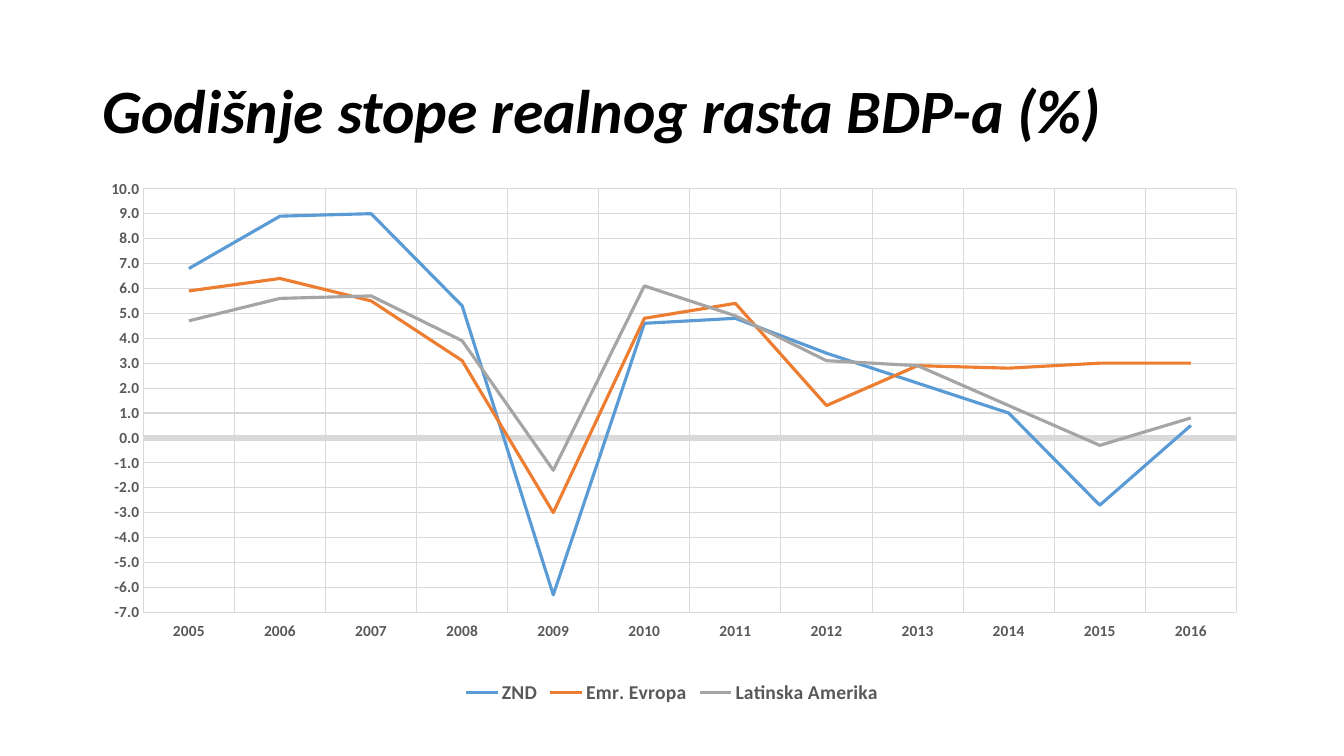
from lxml import etree
from pptx import Presentation
from pptx.chart.data import CategoryChartData
from pptx.dml.color import RGBColor
from pptx.enum.chart import XL_CHART_TYPE, XL_LEGEND_POSITION, XL_TICK_LABEL_POSITION, XL_TICK_MARK
from pptx.enum.text import MSO_ANCHOR
from pptx.oxml.ns import qn
from pptx.util import Pt

FONT = "Calibri"
COLORS = {
    "title": "000000",
    "label": "595959",
    "grid": "D9D9D9",
    "ZND": "5B9BD5",
    "Emr. Evropa": "ED7D31",
    "Latinska Amerika": "A5A5A5",
}
YEARS = [str(year) for year in range(2005, 2017)]
GROWTH = {
    "ZND": (6.8, 8.9, 9, 5.3, -6.3, 4.6, 4.8, 3.4, 2.2, 1, -2.7, 0.5),
    "Emr. Evropa": (5.9, 6.4, 5.5, 3.1, -3, 4.8, 5.4, 1.3, 2.9, 2.8, 3, 3),
    "Latinska Amerika": (4.7, 5.6, 5.7, 3.9, -1.3, 6.1, 4.9, 3.1, 2.9, 1.3, -0.3, 0.8),
}
PLOT_AREA = {"x": 0.044, "y": 0.031, "w": 0.943, "h": 0.79}


def rgb(name):
    return RGBColor.from_string(COLORS[name])


def style_font(font, size, color):
    font.name = FONT
    font.size = Pt(size)
    font.bold = True
    font.color.rgb = rgb(color)


def style_line(line, color, width):
    line.color.rgb = rgb(color)
    line.width = Pt(width)


def add_title(s, text):
    box = s.shapes.add_textbox(Pt(66), Pt(28.75), Pt(828), Pt(104.4))
    tf = box.text_frame
    tf.word_wrap = True
    tf.vertical_anchor = MSO_ANCHOR.MIDDLE
    p = tf.paragraphs[0]
    p.line_spacing = 0.9
    r = p.add_run()
    r.text = text
    style_font(r.font, 44, "title")
    r.font.italic = True


def style_axis(axis):
    axis.major_tick_mark = XL_TICK_MARK.NONE
    axis.minor_tick_mark = XL_TICK_MARK.NONE
    axis.has_major_gridlines = True
    style_line(axis.major_gridlines.format.line, "grid", 0.75)
    style_font(axis.tick_labels.font, 11, "label")


def place_plot(chart):
    """Fix the inner plot area as fractions of the chart frame."""
    plot_area = chart.plots[0]._element.getparent()
    for old in plot_area.findall(qn("c:layout")):
        plot_area.remove(old)
    layout = etree.Element(qn("c:layout"))
    plot_area.insert(0, layout)
    manual = etree.SubElement(layout, qn("c:manualLayout"))
    settings = {"layoutTarget": "inner", "xMode": "edge", "yMode": "edge", **PLOT_AREA}
    for tag, value in settings.items():
        etree.SubElement(manual, qn(f"c:{tag}")).set("val", str(value))


def add_growth_chart(s):
    data = CategoryChartData(number_format="0.0")
    data.categories = YEARS
    for name, values in GROWTH.items():
        data.add_series(name, values)
    frame = s.shapes.add_chart(XL_CHART_TYPE.LINE, Pt(66), Pt(123), Pt(828), Pt(383), data)
    chart = frame.chart
    chart.font.name = FONT
    chart.font.size = Pt(10)
    chart.has_title = False
    chart.plots[0].vary_by_categories = False

    years, rates = chart.category_axis, chart.value_axis
    style_axis(years)
    years.tick_label_position = XL_TICK_LABEL_POSITION.LOW
    style_line(years.format.line, "grid", 4.5)
    style_axis(rates)
    rates.minimum_scale, rates.maximum_scale, rates.major_unit = -7, 10, 1
    rates.tick_labels.number_format = "0.0"
    rates.tick_labels.number_format_is_linked = False
    rates.format.line.fill.background()

    for series in chart.plots[0].series:
        series.smooth = False
        style_line(series.format.line, series.name, 2.25)

    chart.has_legend = True
    chart.legend.position = XL_LEGEND_POSITION.BOTTOM
    chart.legend.include_in_layout = False
    style_font(chart.legend.font, 14, "label")
    place_plot(chart)


def main():
    prs = Presentation()
    prs.slide_width, prs.slide_height = Pt(960), Pt(540)
    s = prs.slides.add_slide(prs.slide_layouts[6])
    add_title(s, "Godišnje stope realnog rasta BDP-a (%)")
    add_growth_chart(s)
    prs.save("out.pptx")


if __name__ == "__main__":
    main()
